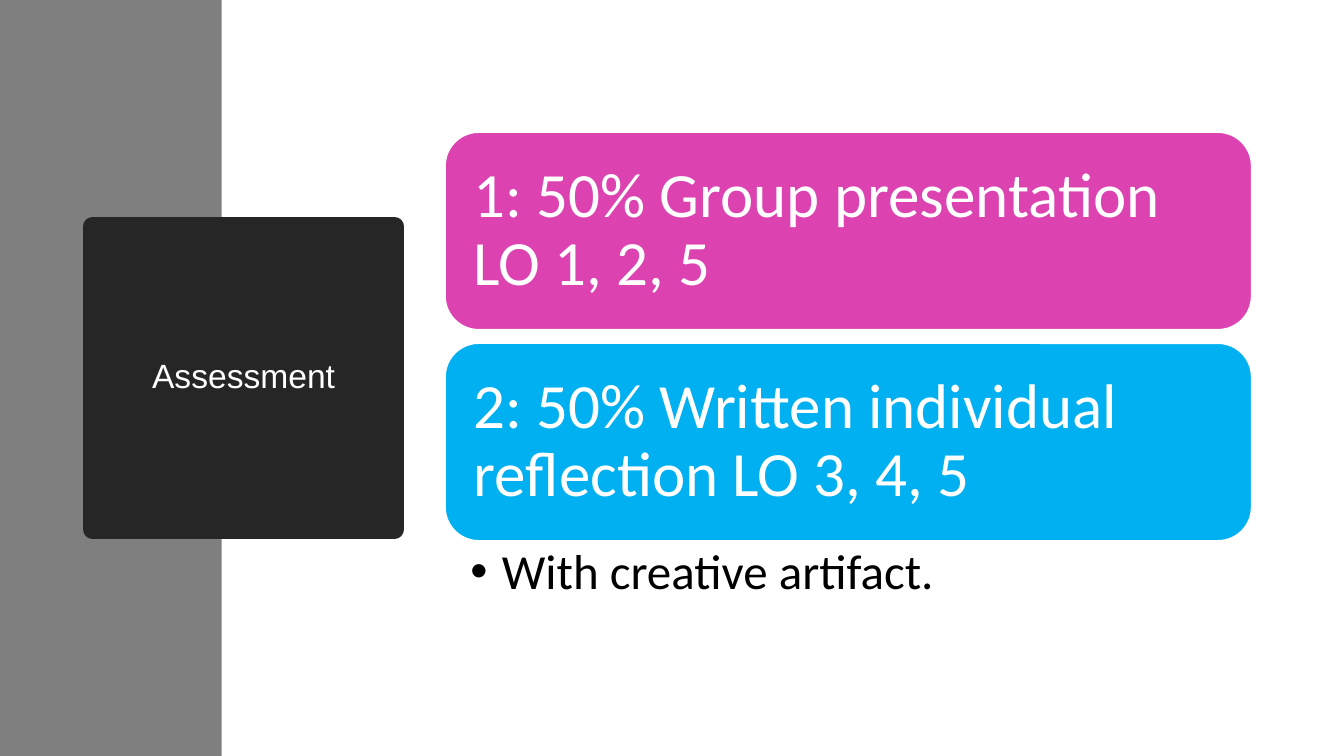
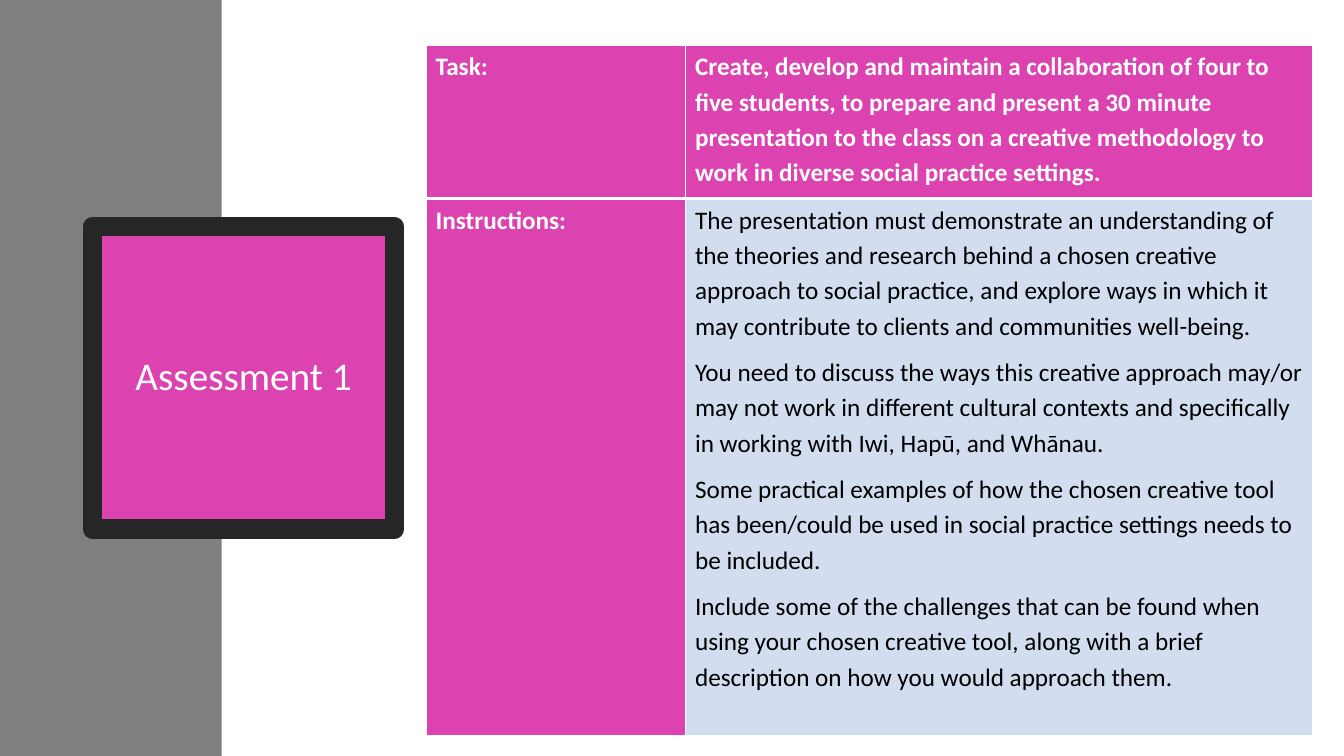
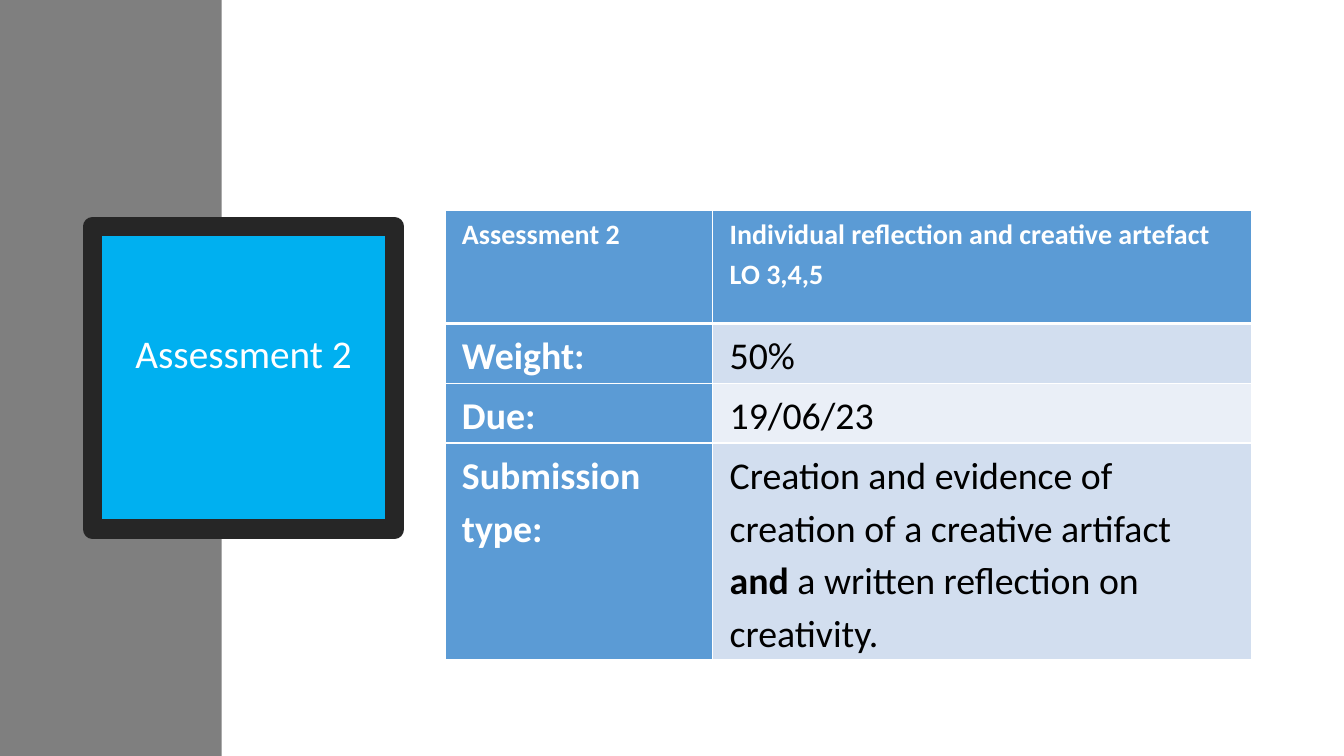
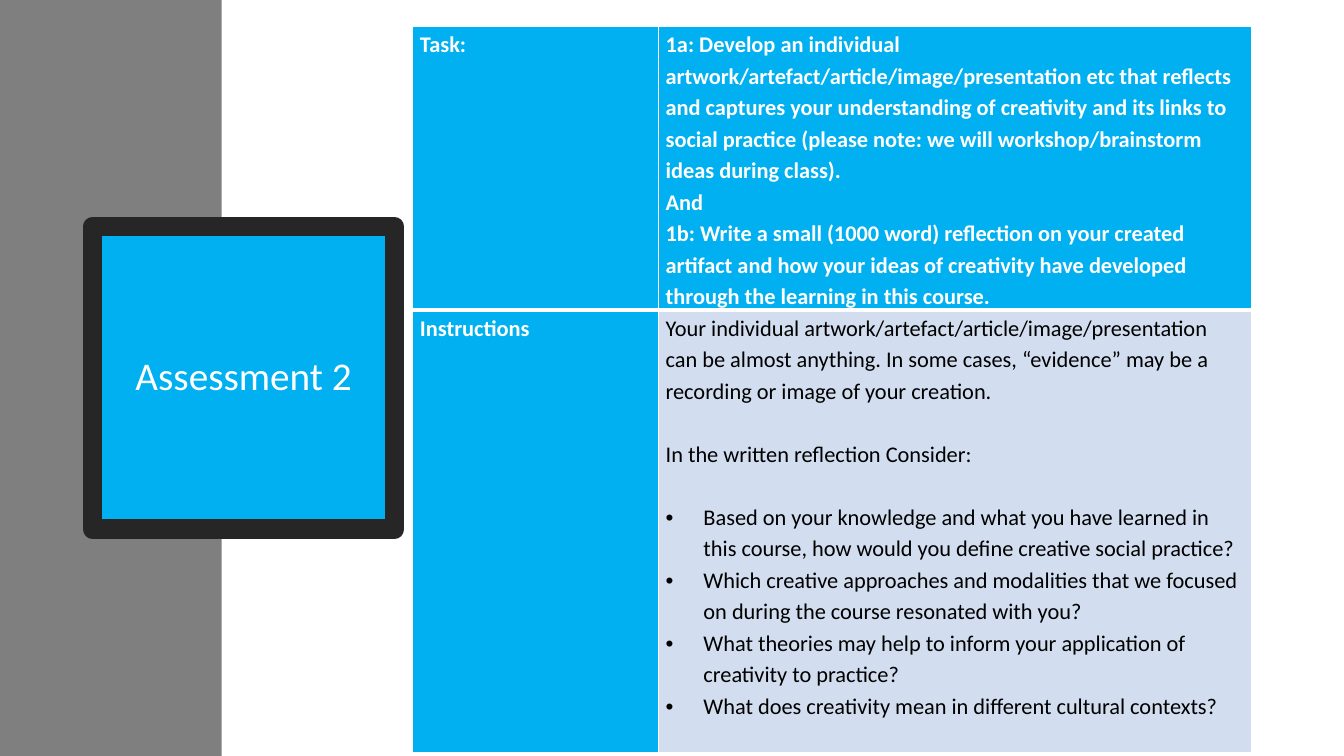
import dataclasses
import lxml.etree
import pptx
import pptx.dml.color
import pptx.enum.shapes
import pptx.enum.text
import pptx.oxml.ns
import pptx.util

SHAPE = pptx.enum.shapes.MSO_SHAPE
ALIGN = pptx.enum.text.PP_ALIGN
ANCHOR = pptx.enum.text.MSO_ANCHOR
qn = pptx.oxml.ns.qn


@dataclasses.dataclass(frozen=True)
class Theme:
    """Colours, fonts and type sizes of the deck."""
    white: str = "FFFFFF"
    black: str = "000000"
    grey: str = "7F7F7F"
    dark: str = "262626"
    pink: str = "DC42B0"
    sky: str = "00B0F0"
    blue: str = "5B9BD5"
    bands: tuple = ("D2DEEF", "EAEFF7")
    font: str = "Calibri"
    plain: str = "Arial"
    small: int = 24
    title: int = 28
    card: int = 45
    note: int = 35
    task: int = 18
    guide: int = 16
    head: int = 20
    fact: int = 27
    frame: float = 13.75
    thin: int = 1
    thick: int = 3


@dataclasses.dataclass(frozen=True)
class Style:
    """Look of a block of text."""
    size: int
    color: str
    font: str = "Calibri"
    bold: bool = False
    lead: float = 0.9
    after: float = 0


@dataclasses.dataclass(frozen=True)
class Para:
    """Paragraph of (text, bold) runs, with its own gap and bullet indent."""
    runs: tuple
    after: float = None
    hang: int = 0


@dataclasses.dataclass(frozen=True)
class Grid:
    """Measures and look of a two-column table."""
    box: tuple
    cols: tuple
    rows: tuple
    inset: tuple
    color: str
    sizes: tuple
    after: float = 0.1


T = Theme()
WIDE, HIGH = 1280, 720


def px(num):
    """Turn px into EMU."""
    return pptx.util.Emu(num * 9525)


def rgb(code):
    """Turn a hex code into a colour."""
    return pptx.dml.color.RGBColor.from_string(code)


def say(text, **more):
    """Make a paragraph of one run."""
    return Para(((text, None),), **more)


def write(frame, paras, style, align=ALIGN.LEFT):
    """Write paragraphs run by run into a text frame."""
    frame.word_wrap = True
    for num, para in enumerate(paras):
        line = frame.add_paragraph() if num else frame.paragraphs[0]
        line.alignment = align
        line.line_spacing = style.lead
        gap = style.after if para.after is None else para.after
        line.space_after = pptx.util.Pt(gap)
        if para.hang:
            props = line._p.get_or_add_pPr()
            props.set("marL", str(px(para.hang)))
            props.set("indent", str(px(-para.hang)))
            lxml.etree.SubElement(props, qn("a:buFont"), typeface="Arial")
            lxml.etree.SubElement(props, qn("a:buChar"), char="•")
        for text, bold in para.runs:
            run = line.add_run()
            run.text = text
            run.font.name = style.font
            run.font.size = pptx.util.Pt(style.size)
            run.font.bold = style.bold if bold is None else bold
            run.font.color.rgb = rgb(style.color)


def pad(item, left, top, right, base):
    """Set the four text margins of a frame or cell."""
    item.margin_left, item.margin_top = px(left), px(top)
    item.margin_right, item.margin_bottom = px(right), px(base)


def block(slide, kind, box, color, edge=None, width=0):
    """Add a flat filled shape."""
    shape = slide.shapes.add_shape(kind, *map(px, box))
    shape.shadow.inherit = False
    shape.fill.solid()
    shape.fill.fore_color.rgb = rgb(color)
    if edge:
        shape.line.color.rgb = rgb(edge)
        shape.line.width = pptx.util.Pt(width)
        line = shape.element.spPr.find(qn("a:ln"))
        lxml.etree.SubElement(line, qn("a:round"))
    else:
        shape.line.fill.background()
    return shape


def base(deck, text, color, style, lift=0):
    """Add a slide with the side band and the framed title."""
    slide = deck.slides.add_slide(deck.slide_layouts[6])
    block(slide, SHAPE.RECTANGLE, (0, 0, 211, HIGH), T.grey)
    box = block(slide, SHAPE.RECTANGLE, (88, 216, 288, 288), color, T.dark, T.frame)
    frame = box.text_frame
    frame.vertical_anchor = ANCHOR.MIDDLE
    pad(frame, 10, 5, 10, 5 + lift)
    write(frame, [say(text)], style, ALIGN.CENTER)
    return slide


def cards(slide, box, items, gap, note):
    """Stack coloured cards with a bulleted note beneath."""
    left, top, width, high = box
    for text, color in items:
        card = block(slide, SHAPE.ROUNDED_RECTANGLE, (left, top, width, high),
                     color, T.white, T.thin)
        card.adjustments[0] = 0.17
        frame = card.text_frame
        frame.vertical_anchor = ANCHOR.MIDDLE
        pad(frame, 18, 18, 18, 18)
        write(frame, [say(text)], Style(T.card, T.white))
        top += high + gap
    area = slide.shapes.add_textbox(*map(px, (left, top - gap, width, 78)))
    pad(area.text_frame, 24, 6, 34, 6)
    write(area.text_frame, [say(note, hang=30)], Style(T.note, T.black))


def rule(cell, row):
    """Draw white cell borders, thick below the heading row."""
    props = cell._tc.get_or_add_tcPr()
    thick = {"lnT": row == 1, "lnB": row == 0}
    for num, side in enumerate(("lnL", "lnR", "lnT", "lnB")):
        width = T.thick if thick.get(side) else T.thin
        line = lxml.etree.Element(qn("a:" + side), w=str(pptx.util.Pt(width)))
        fill = lxml.etree.SubElement(line, qn("a:solidFill"))
        lxml.etree.SubElement(fill, qn("a:srgbClr"), val=T.white)
        props.insert(num, line)


def table(slide, grid, data):
    """Add a table with a coloured heading row and column."""
    size = (sum(grid.cols), sum(grid.rows))
    frame = slide.shapes.add_table(len(grid.rows), len(grid.cols),
                                   *map(px, grid.box + size))
    tab = frame.table
    tab.first_row = tab.horz_banding = False
    for col, width in zip(tab.columns, grid.cols):
        col.width = px(width)
    for row, high in enumerate(grid.rows):
        tab.rows[row].height = px(high)
        for col, paras in enumerate(data[row]):
            cell = tab.cell(row, col)
            head = row == 0 or col == 0
            pad(cell, *grid.inset)
            cell.fill.solid()
            cell.fill.fore_color.rgb = rgb(grid.color if head else T.bands[(row - 1) % 2])
            rule(cell, row)
            style = Style(grid.sizes[min(row, 1)], T.white if head else T.black,
                          bold=head, lead=1.15, after=grid.after)
            write(cell.text_frame, paras, style)


def main():
    """Build and save the deck."""
    deck = pptx.Presentation()
    deck.slide_width, deck.slide_height = px(WIDE), px(HIGH)
    title = Style(T.title, T.white)

    slide = base(deck, "Assessment", T.dark, Style(T.small, T.white, T.plain))
    cards(slide, (424, 126, 768, 188), (
        ("1: 50% Group presentation LO 1, 2, 5", T.pink),
        ("2: 50% Written individual reflection LO 3, 4, 5", T.sky),
    ), 13, "With creative artifact.")

    slide = base(deck, "Assessment 1", T.pink, title)
    grid = Grid((406, 43), (247, 597), (146, 512), (9, 2, 9, 0), T.pink,
                (T.task, T.task), 7.8)
    table(slide, grid, (
        ([say("Task:")],
         [say("Create, develop and maintain a collaboration of four to five students, to prepare and present a 30 minute presentation to the class on a creative methodology to work in diverse social practice settings.")]),
        ([say("Instructions:")],
         [say("The presentation must demonstrate an understanding of the theories and research behind a chosen creative approach to social practice, and explore ways in which it may contribute to clients and communities well-being."),
          say("You need to discuss the ways this creative approach may/or may not work in different cultural contexts and specifically in working with Iwi, Hapū, and Whānau."),
          say("Some practical examples of how the chosen creative tool has been/could be used in social practice settings needs to be included."),
          say("Include some of the challenges that can be found when using your chosen creative tool, along with a brief description on how you would approach them.")]),
    ))

    slide = base(deck, "Assessment 2", T.sky, title, 42)
    grid = Grid((424, 200), (255, 513), (108, 57, 57, 206), (16, 3, 17, 0), T.blue,
                (T.head, T.fact))
    table(slide, grid, (
        ([say("Assessment 2")],
         [say("Individual reflection and creative artefact LO 3,4,5")]),
        ([say("Weight:")], [say("50%")]),
        ([say("Due:")], [say("19/06/23")]),
        ([say("Submission type:")],
         [Para((("Creation and evidence of creation of a creative artifact ", None),
                ("and", True), (" a written reflection on creativity.", None)))]),
    ))

    slide = base(deck, "Assessment 2", T.sky, title)
    grid = Grid((393, 25), (234, 565), (270, 422), (7, 1, 7, 0), T.sky,
                (T.guide, T.guide))
    asks = (
        "Based on your knowledge and what you have learned in this course, how would you define creative social practice?",
        "Which creative approaches and modalities that we focused on during the course resonated with you?",
        "What theories may help to inform your application of creativity to practice?",
        "What does creativity mean in different cultural contexts?",
    )
    table(slide, grid, (
        ([say("Task:")],
         [say("1a: Develop an individual artwork/artefact/article/image/presentation etc that reflects and captures your understanding of creativity and its links to social practice (please note: we will workshop/brainstorm ideas during class)."),
          say("And"),
          say("1b: Write a small (1000 word) reflection on your created artifact and how your ideas of creativity have developed through the learning in this course.")]),
        ([say("Instructions")],
         [say("Your individual artwork/artefact/article/image/presentation can be almost anything. In some cases, “evidence” may be a recording or image of your creation.", after=22.5),
          say("In the written reflection Consider:", after=22.5)]
         + [say(ask, hang=36) for ask in asks]),
    ))
    deck.save("out.pptx")


if __name__ == "__main__":
    main()
